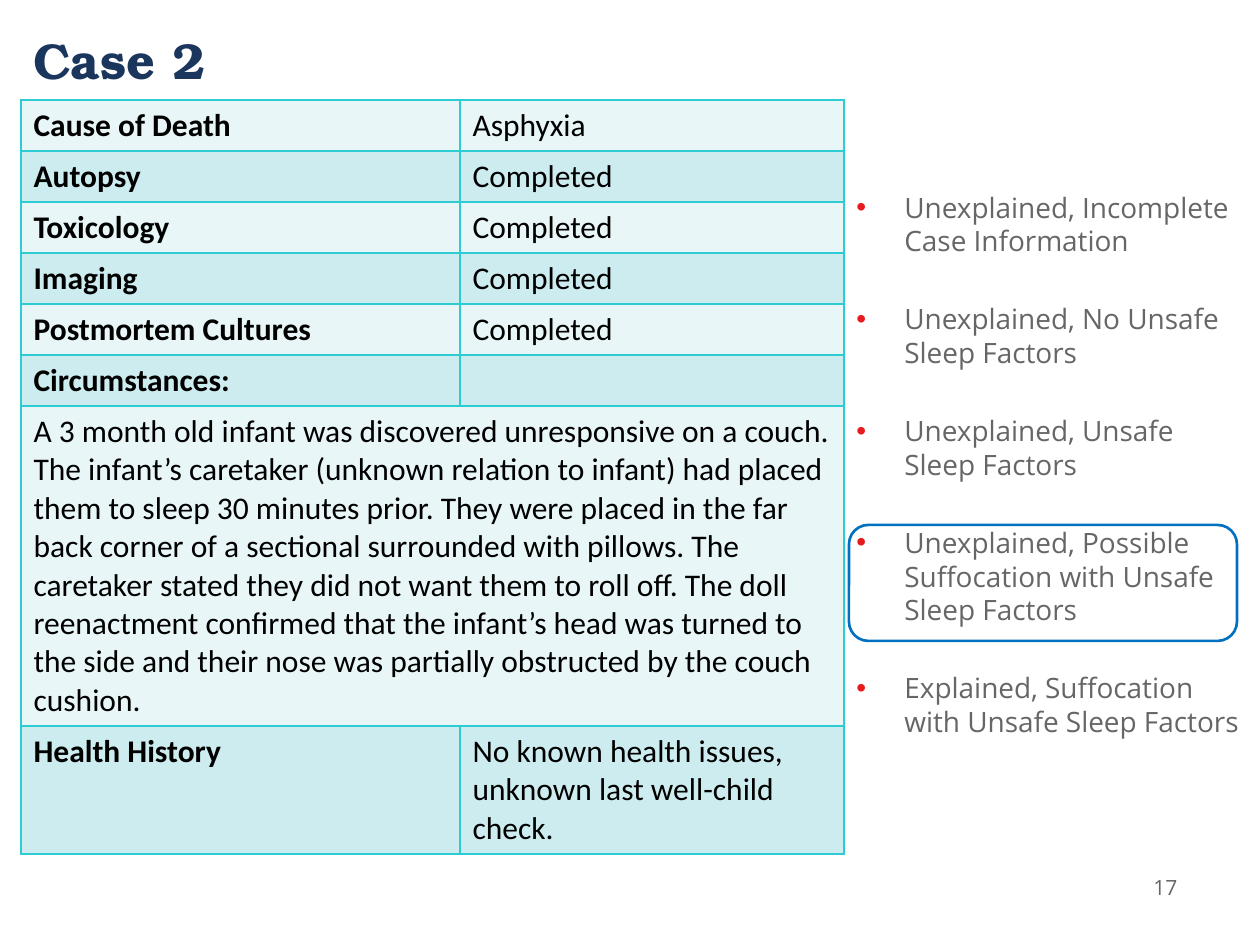
from lxml.etree import SubElement
from pptx import Presentation
from pptx.dml.color import RGBColor
from pptx.enum.shapes import MSO_SHAPE as SHAPE
from pptx.enum.text import MSO_ANCHOR as ANCHOR, PP_ALIGN as ALIGN
from pptx.oxml.ns import qn
from pptx.util import Pt

TITLE = "Case 2"
PAGE = "17"
FACTS = [
    ("Cause of Death", "Asphyxia"),
    ("Autopsy", "Completed"),
    ("Toxicology", "Completed"),
    ("Imaging", "Completed"),
    ("Postmortem Cultures", "Completed"),
    ("Circumstances:", ""),
    ("A 3 month old infant was discovered unresponsive on a couch. "
     "The infant’s caretaker (unknown relation to infant) had placed them to sleep "
     "30 minutes prior. They were placed in the far back corner of a sectional "
     "surrounded with pillows. The caretaker stated they did not want them to roll off. "
     "The doll reenactment confirmed that the infant’s head was turned to the side and "
     "their nose was partially obstructed by the couch cushion.",),
    ("Health History", "No known health issues, unknown last well-child check."),
]
OPTIONS = [
    "Unexplained, Incomplete Case Information",
    "Unexplained, No Unsafe Sleep Factors",
    "Unexplained, Unsafe Sleep Factors",
    "Unexplained, Possible Suffocation with Unsafe Sleep Factors",
    "Explained, Suffocation with Unsafe Sleep Factors",
]
COLORS = {"title": "1B365D", "text": "000000", "gray": "666666", "bullet": "E71B1B",
          "answer": "0070C0", "border": "2DCCD3", "light": "E8F6F7", "dark": "CDECEF"}
COLS = [439, 384]
ROWS = [51] * 6 + [320, 128]


def px(n):
    return round(n * 914400 / 126)


def box(x, y, w, h):
    return [px(n) for n in (x, y, w, h)]


def rgb(name):
    return RGBColor.from_string(COLORS[name])


def style(p, font, size, color, bold=False):
    p.font.name, p.font.size, p.font.bold = font, Pt(size), bold
    p.font.color.rgb = rgb(color)


def add_borders(cell):
    tc_pr = cell._tc.get_or_add_tcPr()
    for side in ("lnL", "lnR", "lnT", "lnB"):
        ln = SubElement(tc_pr, qn(f"a:{side}"), w=str(Pt(1)))
        fill = SubElement(ln, qn("a:solidFill"))
        SubElement(fill, qn("a:srgbClr"), val=COLORS["border"])


def add_bullet(p):
    p_pr = p._p.get_or_add_pPr()
    p_pr.set("marL", str(px(48)))
    p_pr.set("indent", str(px(-48)))
    color = SubElement(p_pr, qn("a:buClr"))
    SubElement(color, qn("a:srgbClr"), val=COLORS["bullet"])
    SubElement(p_pr, qn("a:buFont"), typeface="Arial")
    SubElement(p_pr, qn("a:buChar"), char="•")


def add_title(s):
    sp = s.shapes.title
    sp.left, sp.top, sp.width, sp.height = box(21, 33, 1134, 53)
    tf = sp.text_frame
    tf.text = TITLE
    tf.vertical_anchor = ANCHOR.MIDDLE
    p = tf.paragraphs[0]
    p.alignment = ALIGN.LEFT
    style(p, "TeX Gyre Bonum", 28.8, "title", True)


def add_facts(s):
    frame = s.shapes.add_table(len(ROWS), len(COLS), *box(21, 100, sum(COLS), sum(ROWS)))
    table = frame.table
    table.first_row = table.horz_banding = False
    for col, width in zip(table.columns, COLS):
        col.width = px(width)
    for i, (row, height, texts) in enumerate(zip(table.rows, ROWS, FACTS)):
        row.height = px(height)
        if len(texts) == 1:
            table.cell(i, 0).merge(table.cell(i, 1))
        for j, cell in enumerate(row.cells):
            add_borders(cell)
            cell.fill.solid()
            cell.fill.fore_color.rgb = rgb("dark" if i % 2 else "light")
            if j < len(texts):
                cell.text = texts[j]
            style(cell.text_frame.paragraphs[0], "Calibri", 18, "text",
                  j == 0 and len(texts) == 2)


def add_options(s):
    tf = s.shapes.add_textbox(*box(844, 184, 416, 577)).text_frame
    tf.word_wrap = True
    for i, text in enumerate(OPTIONS):
        p = tf.paragraphs[0] if i == 0 else tf.add_paragraph()
        p.text = text
        if i:
            p.space_before = Pt(25.5)
        add_bullet(p)
        style(p, "Open Sans", 16, "gray")


def add_answer_outline(s):
    sp = s.shapes.add_shape(SHAPE.ROUNDED_RECTANGLE, *box(849, 525, 388, 116))
    sp.shadow.inherit = False
    sp.fill.background()
    sp.line.color.rgb = rgb("answer")
    sp.line.width = Pt(1.5)


def add_page_number(s):
    tf = s.shapes.add_textbox(*box(1134, 861, 63, 53)).text_frame
    tf.vertical_anchor = ANCHOR.MIDDLE
    p = tf.paragraphs[0]
    p.text = PAGE
    p.alignment = ALIGN.CENTER
    style(p, "Open Sans", 12, "gray")


def main():
    prs = Presentation()
    prs.slide_width, prs.slide_height = px(1260), px(945)
    s = prs.slides.add_slide(prs.slide_layouts[5])
    add_page_number(s)
    add_title(s)
    add_answer_outline(s)
    add_facts(s)
    add_options(s)
    prs.save("out.pptx")


if __name__ == "__main__":
    main()
